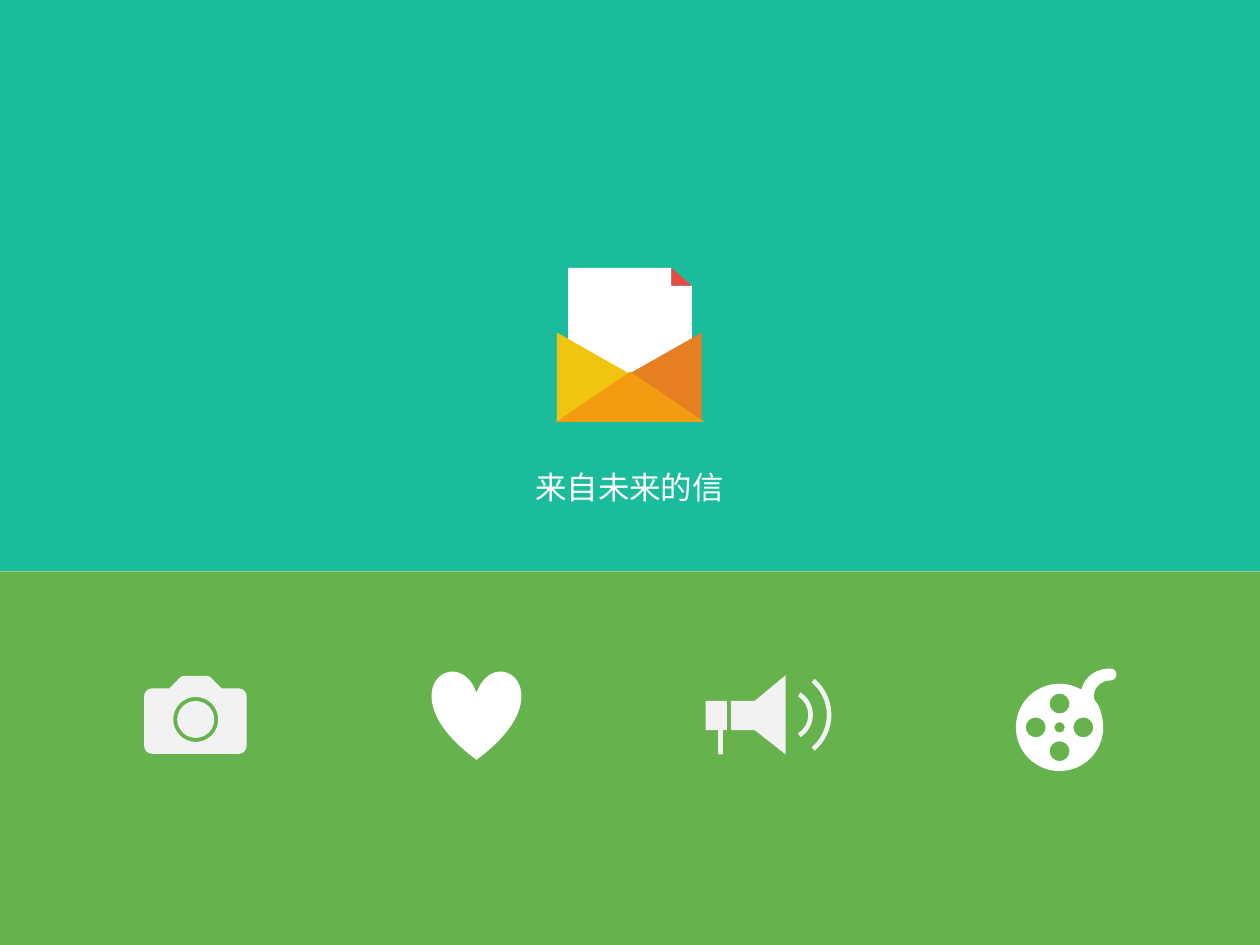
from dataclasses import dataclass
from math import cos, radians, sin, tan

from lxml.etree import SubElement
from pptx import Presentation
from pptx.dml.color import RGBColor as Rgb
from pptx.enum.shapes import MSO_SHAPE as Kind
from pptx.enum.text import MSO_ANCHOR as Anchor, PP_ALIGN as Align
from pptx.oxml.ns import qn
from pptx.util import Cm, Pt

WIDTH, HEIGHT, SPLIT = 19.05, 14.29, 8.64  # centimetres
UNITS = 1000  # outline steps per centimetre


@dataclass(frozen=True)
class Theme:
    teal: str = "1BBC9B"
    green: str = "66B34D"
    white: str = "FFFFFF"
    pale: str = "F2F2F2"
    yellow: str = "F1C40F"
    amber: str = "F39C11"
    orange: str = "E67F22"
    red: str = "E94A43"
    font: str = "Noto Sans CJK SC"
    size: float = 13.5


THEME = Theme()


def paint(shape, color):
    shape.shadow.inherit = False
    shape.fill.solid()
    shape.fill.fore_color.rgb = Rgb.from_string(color)
    shape.line.fill.background()


def block(shapes, kind, box, color, turn=0):
    """Add a preset shape; box is left, top, width, height in cm."""
    shape = shapes.add_shape(kind, *map(Cm, box))
    shape.rotation = turn
    paint(shape, color)


def lines(*points):
    return [(point,) for point in points]


def arc(x, y, radius, *turns):
    """A start point, then one Bezier step to each further angle in degrees."""
    def spot(angle, slide=0):
        t = radians(angle)
        return (x + radius * (cos(t) - slide * sin(t)),
                y + radius * (sin(t) + slide * cos(t)))

    steps = lines(spot(turns[0]))
    for start, end in zip(turns, turns[1:]):
        pull = 4 / 3 * tan(radians(end - start) / 4)
        steps.append((spot(start, pull), spot(end, -pull), spot(end)))
    return steps


def ring(x, y, radius):
    return arc(x, y, radius, 0, 90, 180, 270, 360)


def outline(shapes, color, *loops):
    """Add one freeform of line and Bezier steps; later loops cut holes."""
    pen = None
    for loop in loops:
        first, *rest = [(x * UNITS, y * UNITS) for step in loop for x, y in step]
        if pen is None:
            pen = shapes.build_freeform(*first, scale=Cm(1) / UNITS)
        else:
            pen.move_to(*first)
        pen.add_line_segments(rest, close=True)
    shape = pen.convert_to_shape()
    paint(shape, color)
    nodes = iter(list(shape._element.iter(qn("a:lnTo"))))
    for step in (step for loop in loops for step in loop[1:]):
        head, *tail = [next(nodes) for _ in step]
        if tail:
            head.tag = qn("a:cubicBezTo")
        for node in tail:
            head.append(node[0])
            node.getparent().remove(node)


def label(shapes, text, box):
    frame = shapes.add_textbox(*map(Cm, box)).text_frame
    frame.word_wrap = False
    frame.margin_top = frame.margin_bottom = 0
    frame.vertical_anchor = Anchor.MIDDLE
    frame.text = text
    line = frame.paragraphs[0]
    line.alignment = Align.CENTER
    font = line.runs[0].font
    font.size = Pt(THEME.size)
    font.color.rgb = Rgb.from_string(THEME.white)
    font.name = THEME.font
    SubElement(font._element, qn("a:ea"), typeface=THEME.font)


def camera(shapes):
    x, y = 2.96, 10.88
    body = [
        *arc(2.3, 10.53, 0.12, 180, 270), *lines((2.56, 10.41)),
        *arc(2.79, 10.32, 0.1, 225, 270),
        *arc(3.12, 10.32, 0.1, 270, 315), *lines((3.35, 10.41)),
        *arc(3.61, 10.53, 0.12, 270, 360),
        *arc(3.61, 11.28, 0.12, 0, 90),
        *arc(2.3, 11.28, 0.12, 90, 180),
    ]
    outline(shapes, THEME.pale, body, ring(x, y, 0.34))
    lens = 0.28
    block(shapes, Kind.OVAL, (x - lens, y - lens, 2 * lens, 2 * lens), THEME.pale)


def horn(shapes):
    for x, radius, spread in ((11.86, 0.71, 50), (11.89, 0.4, 58)):
        wave = (arc(x, 10.81, radius, -spread, 0, spread)
                + arc(x, 10.81, radius - 0.07, spread, 0, -spread))
        outline(shapes, THEME.pale, wave)
    top, base, foot = 10.6, 11.04, 11.41
    outline(shapes, THEME.pale, lines(
        (10.67, top), (10.99, top), (10.99, base), (10.93, base),
        (10.93, foot), (10.86, foot), (10.86, base), (10.67, base)))
    outline(shapes, THEME.pale, lines(
        (11.05, top), (11.41, top), (11.88, 10.21),
        (11.88, foot), (11.41, base), (11.05, base)))


def reel(shapes):
    x, y, gap = 16.02, 11, 0.36
    rim = [
        *arc(x, y, 0.66, 0, 90, 180, 270, 300),
        ((16.41, 10.21), (16.59, 10.11), (16.79, 10.11)),
        *arc(16.79, 10.2, 0.09, 270, 360, 450)[1:],
        ((16.66, 10.29), (16.54, 10.39), (16.54, 10.52)),
        ((16.54, 10.56), (16.54, 10.59), (16.59, 10.64)),
        ((16.64, 10.72), (16.68, 10.87), (16.68, 11)),
    ]
    holes = [ring(x + dx * gap, y + dy * gap, 0.15)
             for dx, dy in ((-1, 0), (1, 0), (0, 1), (0, -1))]
    outline(shapes, THEME.white, rim, ring(x, y, 0.08), *holes)


def letter(shapes):
    left, top, right, base = 8.59, 4.05, 10.46, 5.84
    fold, drop = 0.31, 0.27
    notch = right - fold
    outline(shapes, THEME.white, lines(
        (left, top), (notch, top), (notch, top + drop),
        (right, top + drop), (right, base), (left, base)))
    flap = Kind.ISOSCELES_TRIANGLE
    block(shapes, flap, (9.34, 5.11, 1.35, 1.19), THEME.orange, 270)
    block(shapes, flap, (8.34, 5.11, 1.35, 1.19), THEME.yellow, 90)
    block(shapes, flap, (8.41, 5.62, 2.24, 0.76), THEME.amber)
    block(shapes, Kind.RIGHT_TRIANGLE, (notch, top, fold, drop), THEME.red)


def main():
    deck = Presentation()
    deck.slide_width, deck.slide_height = Cm(WIDTH), Cm(HEIGHT)
    shapes = deck.slides.add_slide(deck.slide_layouts[6]).shapes
    block(shapes, Kind.RECTANGLE, (0, 0, WIDTH, SPLIT), THEME.teal)
    block(shapes, Kind.RECTANGLE, (0, SPLIT, WIDTH, HEIGHT - SPLIT), THEME.green)
    camera(shapes.add_group_shape().shapes)
    block(shapes, Kind.HEART, (6.53, 10.14, 1.35, 1.35), THEME.white)
    horn(shapes.add_group_shape().shapes)
    reel(shapes)
    letter(shapes.add_group_shape().shapes)
    label(shapes, "来自未来的信", (7.82, 6.94, 3.4, 0.84))
    deck.save("out.pptx")


if __name__ == "__main__":
    main()
